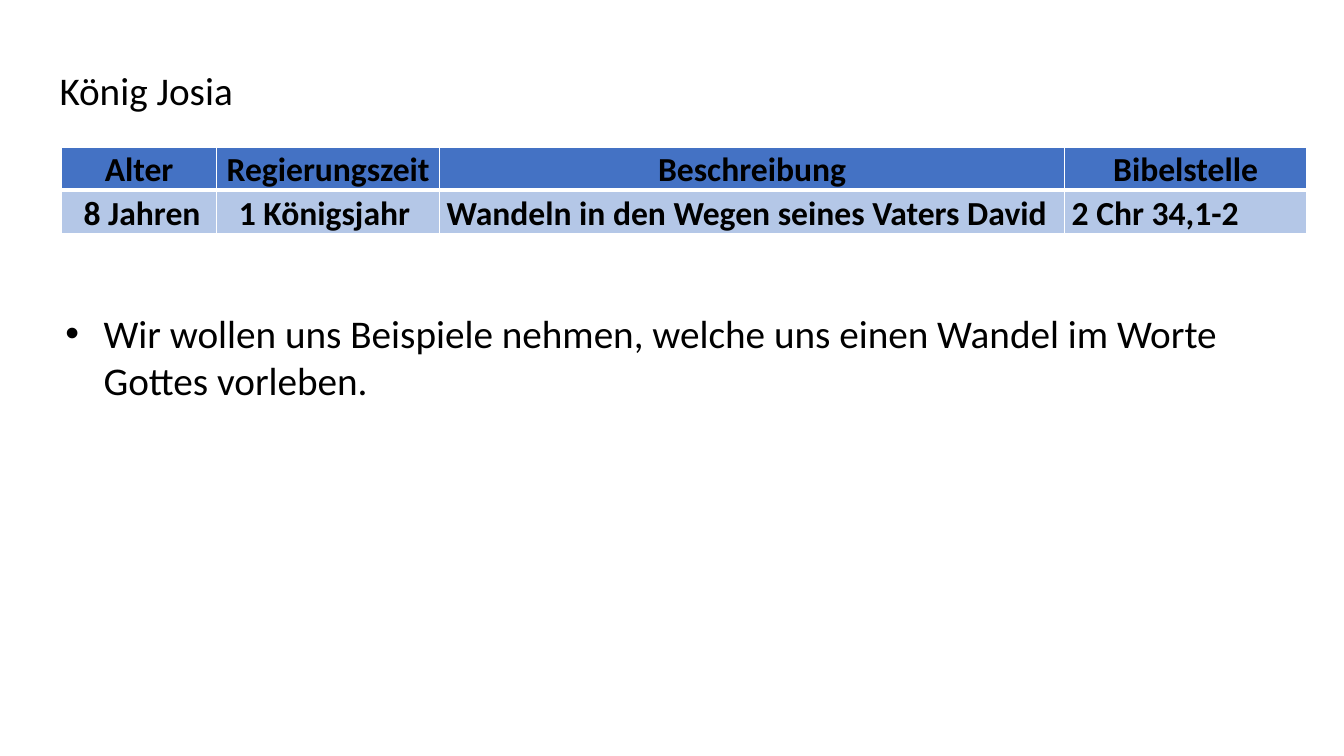
from dataclasses import dataclass

from lxml.etree import SubElement
from pptx import Presentation
from pptx.dml.color import RGBColor
from pptx.enum.text import MSO_ANCHOR, MSO_AUTO_SIZE, PP_ALIGN
from pptx.oxml.ns import qn
from pptx.util import Inches, Pt

COLORS = {"text": "000000", "header": "4472C4", "body": "B4C7E7", "border": "FFFFFF"}
FONT = "Calibri"
LINE_SPACING = 1.07
CELL_INSET = 0.07
ROW_HEIGHT = 0.41


@dataclass(frozen=True)
class Column:
    heading: str
    entry: str
    width: float
    entry_indent: float = 0


COLUMNS = [
    Column("Alter", "8 Jahren", 1.54, 0.15),
    Column("Regierungszeit", "1 Königsjahr", 2.21, 0.15),
    Column("Beschreibung", "Wandeln in den Wegen seines Vaters David", 6.2),
    Column("Bibelstelle", "2 Chr 34,1-2", 2.4),
]


def apply_format(target, values: dict) -> None:
    for name, value in values.items():
        setattr(target, name, value)


def style_font(paragraph, size: float, bold: bool = False) -> None:
    font = paragraph.runs[0].font
    apply_format(font, {"name": FONT, "size": Pt(size), "bold": bold})
    font.color.rgb = RGBColor.from_string(COLORS["text"])


def add_border(cell, side: str, width: float) -> None:
    properties = cell._tc.get_or_add_tcPr()
    line = SubElement(properties, qn(f"a:ln{side}"), w=str(Pt(width)))
    fill = SubElement(line, qn("a:solidFill"))
    SubElement(fill, qn("a:srgbClr"), val=COLORS["border"])


def fill_cell(cell, text: str, is_header: bool, indent: float = 0) -> None:
    cell.text = text
    apply_format(cell, {
        "margin_left": Inches(CELL_INSET + indent),
        "margin_right": Inches(CELL_INSET),
        "margin_top": 0,
        "margin_bottom": 0,
    })
    paragraph = cell.text_frame.paragraphs[0]
    apply_format(paragraph, {
        "alignment": PP_ALIGN.CENTER if is_header else PP_ALIGN.LEFT,
        "line_spacing": LINE_SPACING,
    })
    style_font(paragraph, 24, bold=True)
    # Borders come before the fill in the cell properties
    for side in "LRTB":
        under_header = (is_header and side == "B") or (not is_header and side == "T")
        add_border(cell, side, 3 if under_header else 1)
    cell.fill.solid()
    cell.fill.fore_color.rgb = RGBColor.from_string(COLORS["header" if is_header else "body"])


def add_king_title(slide) -> None:
    title = slide.shapes.title
    apply_format(title, {"left": Inches(0.49), "top": Inches(0.58),
                         "width": Inches(1.94), "height": Inches(0.58)})
    frame = title.text_frame
    frame.text = "König Josia"
    apply_format(frame, {"word_wrap": False, "vertical_anchor": MSO_ANCHOR.TOP,
                         "auto_size": MSO_AUTO_SIZE.SHAPE_TO_FIT_TEXT})
    heading = frame.paragraphs[0]
    apply_format(heading, {"alignment": PP_ALIGN.LEFT, "line_spacing": LINE_SPACING,
                           "space_before": Pt(12)})
    style_font(heading, 28)


def add_reign_table(slide) -> None:
    total_width = sum(column.width for column in COLUMNS)
    reign = slide.shapes.add_table(2, len(COLUMNS), Inches(0.61), Inches(1.46),
                                   Inches(total_width), Inches(2 * ROW_HEIGHT)).table
    for index, column in enumerate(COLUMNS):
        reign.columns[index].width = Inches(column.width)
        fill_cell(reign.cell(0, index), column.heading, True)
        fill_cell(reign.cell(1, index), column.entry, False, column.entry_indent)


def add_lesson(slide) -> None:
    frame = slide.shapes.add_textbox(Inches(0.55), Inches(3.02),
                                     Inches(12.46), Inches(1.04)).text_frame
    apply_format(frame, {"word_wrap": True, "auto_size": MSO_AUTO_SIZE.SHAPE_TO_FIT_TEXT})
    frame.text = ("Wir wollen uns Beispiele nehmen, welche uns einen Wandel "
                  "im Worte Gottes vorleben.")
    lesson = frame.paragraphs[0]
    style_font(lesson, 28)
    # Hanging bullet
    properties = lesson._p.get_or_add_pPr()
    properties.set("marL", str(Inches(0.38)))
    properties.set("indent", str(-Inches(0.38)))
    SubElement(properties, qn("a:buFont"), typeface="Arial")
    SubElement(properties, qn("a:buChar"), char="•")


def main() -> None:
    presentation = Presentation()
    apply_format(presentation, {"slide_width": Inches(13.33), "slide_height": Inches(7.5)})
    slide = presentation.slides.add_slide(presentation.slide_layouts.get_by_name("Title Only"))
    add_king_title(slide)
    add_reign_table(slide)
    add_lesson(slide)
    presentation.save("out.pptx")


if __name__ == "__main__":
    main()
